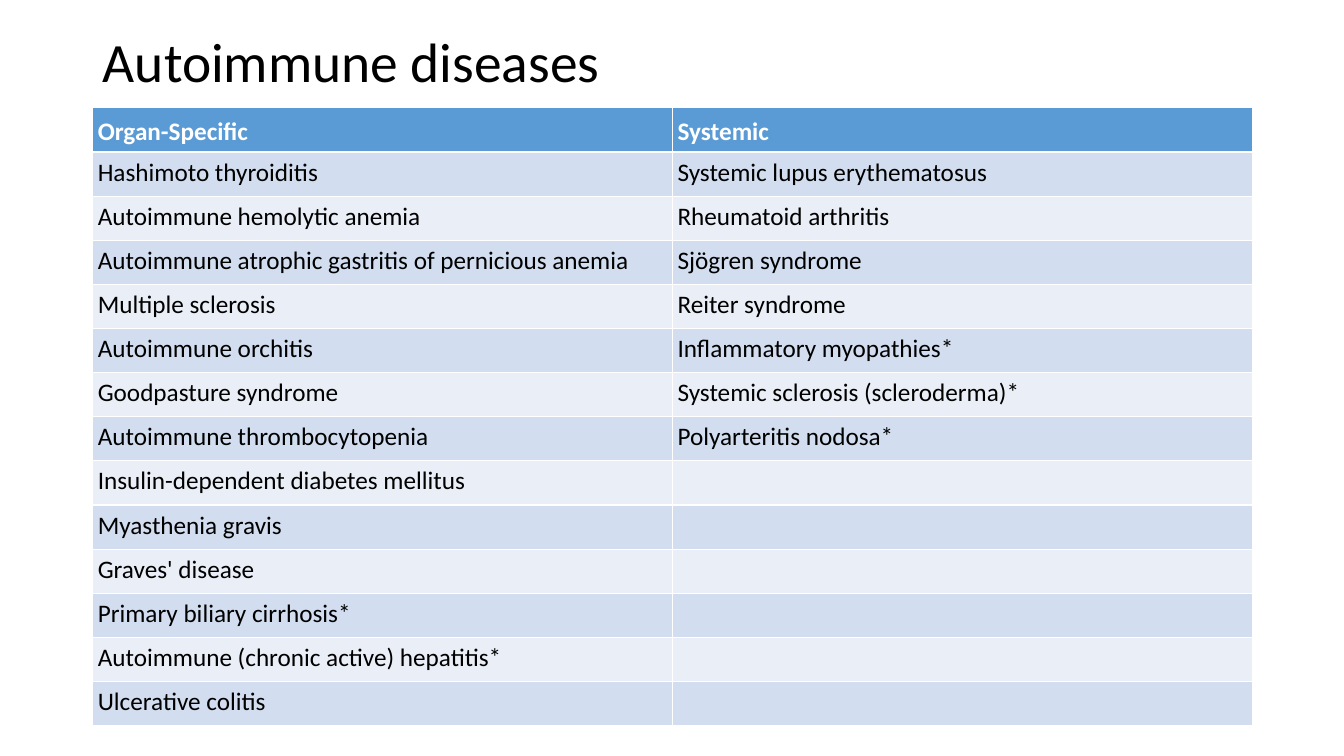
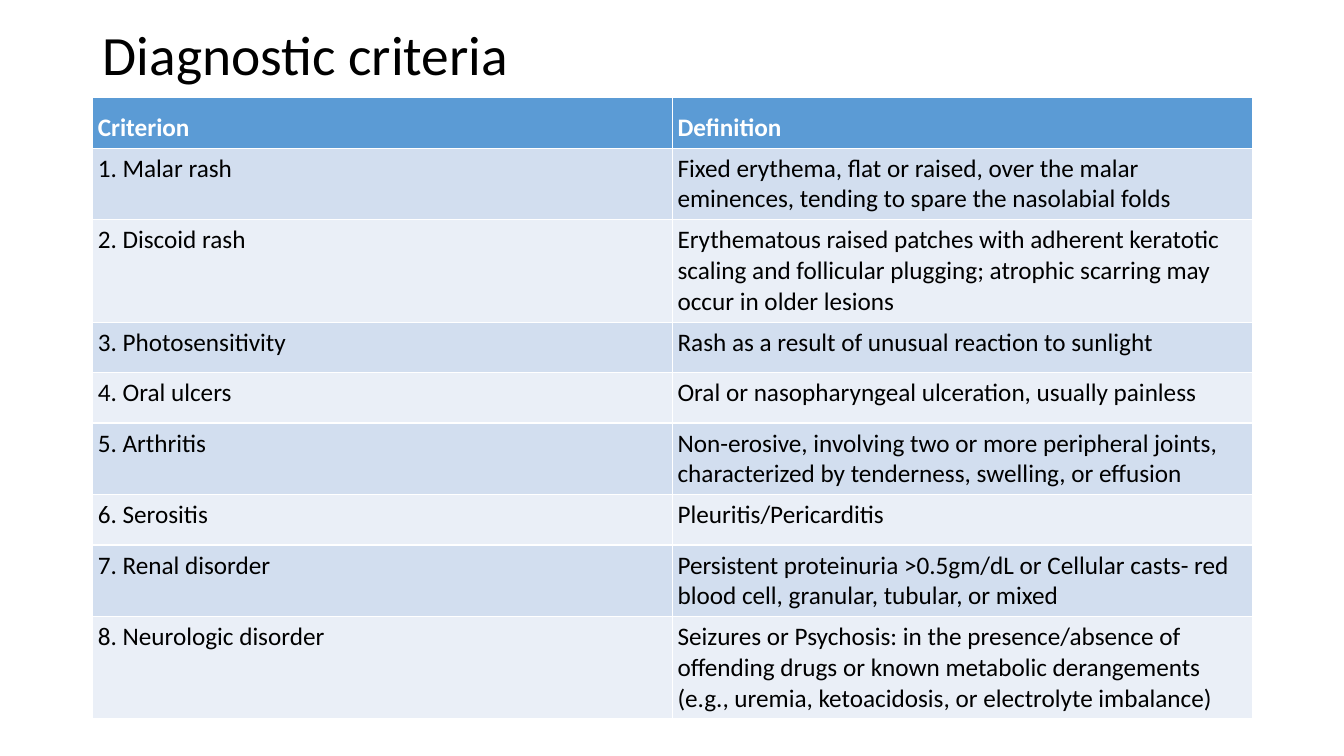
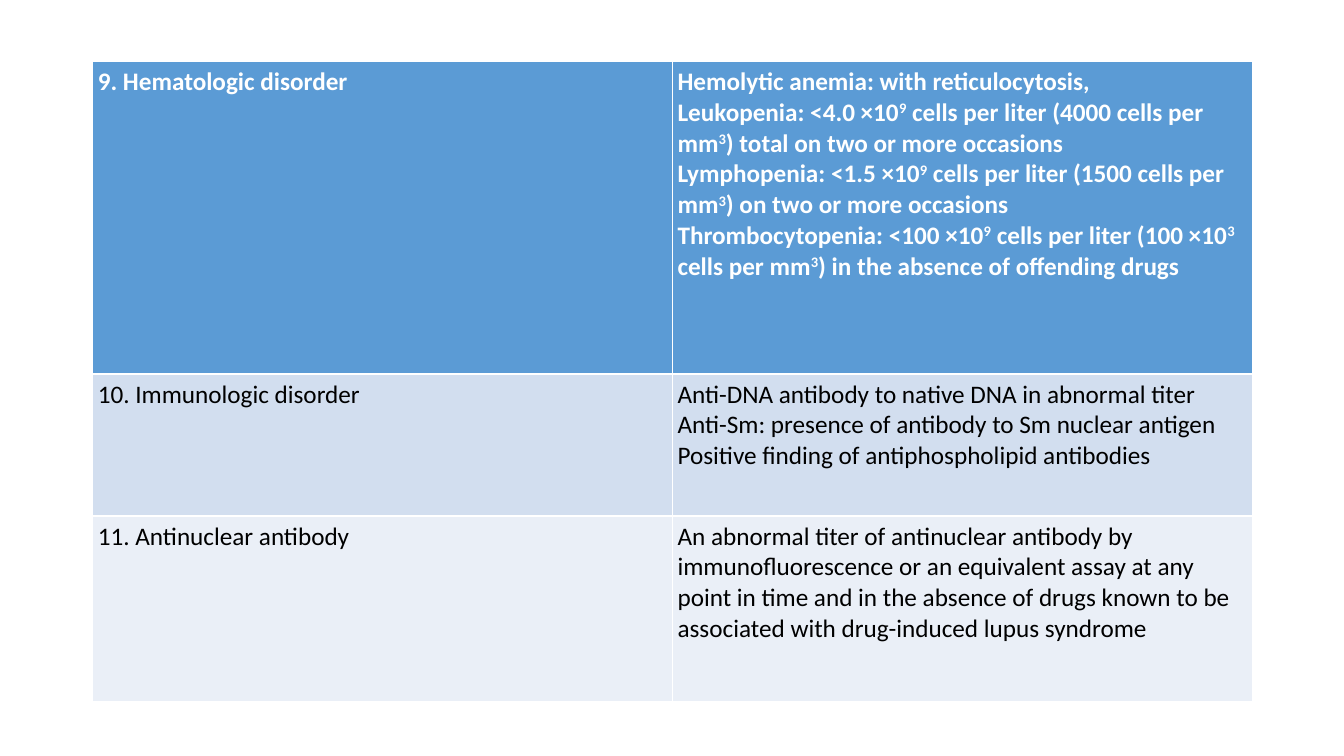
from dataclasses import dataclass

from pptx import Presentation
from pptx import util as u
from pptx.dml.color import RGBColor
from pptx.enum import text


@dataclass(frozen=True)
class Theme:
    font: str = "Calibri"
    title_size: float = 39.6
    body_size: float = 18
    ink: RGBColor = RGBColor(0x00, 0x00, 0x00)
    header_ink: RGBColor = RGBColor(0xFF, 0xFF, 0xFF)
    header_fill: RGBColor = RGBColor(0x5B, 0x9B, 0xD5)
    bands: tuple = (RGBColor(0xD2, 0xDE, 0xEF), RGBColor(0xEA, 0xEF, 0xF7))


THEME = Theme()
LEFT, WIDTH, TITLE_TOP = 0.92, 11.5, 0.4
CELL_INSET = 0.05
TITLE_LAYOUT, BLANK_LAYOUT = 5, 6

DISEASES = [
    ("Organ-Specific", "Systemic"),
    ("Hashimoto thyroiditis", "Systemic lupus erythematosus"),
    ("Autoimmune hemolytic anemia", "Rheumatoid arthritis"),
    ("Autoimmune atrophic gastritis of pernicious anemia", "Sjögren syndrome"),
    ("Multiple sclerosis", "Reiter syndrome"),
    ("Autoimmune orchitis", "Inflammatory myopathies*"),
    ("Goodpasture syndrome", "Systemic sclerosis (scleroderma)*"),
    ("Autoimmune thrombocytopenia", "Polyarteritis nodosa*"),
    ("Insulin-dependent diabetes mellitus", ""),
    ("Myasthenia gravis", ""),
    ("Graves' disease", ""),
    ("Primary biliary cirrhosis*", ""),
    ("Autoimmune (chronic active) hepatitis*", ""),
    ("Ulcerative colitis", ""),
]

CRITERIA = [
    ("Criterion", "Definition"),
    ("1. Malar rash",
     "Fixed erythema, flat or raised, over the malar eminences, "
     "tending to spare the nasolabial folds"),
    ("2. Discoid rash",
     "Erythematous raised patches with adherent keratotic scaling and "
     "follicular plugging; atrophic scarring may occur in older lesions"),
    ("3. Photosensitivity", "Rash as a result of unusual reaction to sunlight"),
    ("4. Oral ulcers", "Oral or nasopharyngeal ulceration, usually painless"),
    ("5. Arthritis",
     "Non-erosive, involving two or more peripheral joints, "
     "characterized by tenderness, swelling, or effusion"),
    ("6. Serositis", "Pleuritis/Pericarditis"),
    ("7. Renal disorder",
     "Persistent proteinuria >0.5gm/dL or Cellular casts- red blood cell, "
     "granular, tubular, or mixed"),
    ("8. Neurologic disorder",
     "Seizures or Psychosis: in the presence/absence of offending drugs or "
     "known metabolic derangements (e.g., uremia, ketoacidosis, or "
     "electrolyte imbalance)"),
]

MORE_CRITERIA = [
    ("9. Hematologic disorder",
     "Hemolytic anemia: with reticulocytosis,\n"
     "Leukopenia: <4.0 ×10^9^ cells per liter (4000 cells per mm^3^) "
     "total on two or more occasions\n"
     "Lymphopenia: <1.5 ×10^9^ cells per liter (1500 cells per mm^3^) "
     "on two or more occasions\n"
     "Thrombocytopenia: <100 ×10^9^ cells per liter (100 ×10^3^ cells per mm^3^) "
     "in the absence of offending drugs"),
    ("10. Immunologic disorder",
     "Anti-DNA antibody to native DNA in abnormal titer\n"
     "Anti-Sm: presence of antibody to Sm nuclear antigen\n"
     "Positive finding of antiphospholipid antibodies"),
    ("11. Antinuclear antibody",
     "An abnormal titer of antinuclear antibody by immunofluorescence or an "
     "equivalent assay at any point in time and in the absence of drugs known "
     "to be associated with drug-induced lupus syndrome"),
]

PAGES = [
    dict(title="Autoimmune diseases", title_height=0.49, top=1.07, rows=DISEASES,
         heights=[6.13 / len(DISEASES)] * len(DISEASES), header_anchor="BOTTOM"),
    dict(title="Diagnostic criteria", title_height=0.35, top=0.97, rows=CRITERIA,
         heights=[0.5] * len(CRITERIA), header_anchor="BOTTOM"),
    dict(title=None, top=0.61, rows=MORE_CRITERIA,
         heights=[3.1, 1.41, 1.84], header_anchor="TOP"),
]


def style_font(para, size, color, bold=False):
    font = para.font
    font.name, font.size, font.bold = THEME.font, u.Pt(size), bold
    font.color.rgb = color


def set_title(page, words, height):
    title = page.shapes.title
    title.left, title.top = u.Inches(LEFT), u.Inches(TITLE_TOP)
    title.width, title.height = u.Inches(WIDTH), u.Inches(height)
    frame = title.text_frame
    frame.text = words
    frame.auto_size = text.MSO_AUTO_SIZE.NONE
    frame.vertical_anchor = text.MSO_ANCHOR.MIDDLE
    para = frame.paragraphs[0]
    para.alignment = text.PP_ALIGN.LEFT
    para.line_spacing = 0.9
    style_font(para, THEME.title_size, THEME.ink)


def write_marked(para, words):
    for line_index, line in enumerate(words.split("\n")):
        if line_index:
            para.add_line_break()
        for part_index, part in enumerate(line.split("^")):
            if not part:
                continue
            span = para.add_run()
            span.text = part
            if part_index % 2:
                span._r.get_or_add_rPr().set("baseline", "30000")


def fill_cell(cell, words, row_index, header_anchor):
    header = row_index == 0
    cell.fill.solid()
    cell.fill.fore_color.rgb = (
        THEME.header_fill if header else THEME.bands[(row_index - 1) % 2])
    cell.margin_left = cell.margin_right = u.Inches(CELL_INSET)
    cell.margin_top = cell.margin_bottom = u.Inches(CELL_INSET)
    cell.vertical_anchor = text.MSO_ANCHOR[header_anchor if header else "TOP"]
    para = cell.text_frame.paragraphs[0]
    write_marked(para, words)
    style_font(para, THEME.body_size,
               THEME.header_ink if header else THEME.ink, header)


def add_grid(page, rows, top, heights, header_anchor):
    table = page.shapes.add_table(
        len(rows), len(rows[0]), u.Inches(LEFT), u.Inches(top),
        u.Inches(WIDTH), u.Inches(sum(heights))).table
    for row_index, (row, height) in enumerate(zip(rows, heights)):
        table.rows[row_index].height = u.Inches(height)
        for column_index, words in enumerate(row):
            fill_cell(table.cell(row_index, column_index), words,
                      row_index, header_anchor)


def main():
    deck = Presentation()
    deck.slide_width, deck.slide_height = u.Inches(13.33), u.Inches(7.5)
    for content in PAGES:
        layout = TITLE_LAYOUT if content["title"] else BLANK_LAYOUT
        page = deck.slides.add_slide(deck.slide_layouts[layout])
        if content["title"]:
            set_title(page, content["title"], content["title_height"])
        add_grid(page, content["rows"], content["top"],
                 content["heights"], content["header_anchor"])
    deck.save("out.pptx")


if __name__ == "__main__":
    main()
